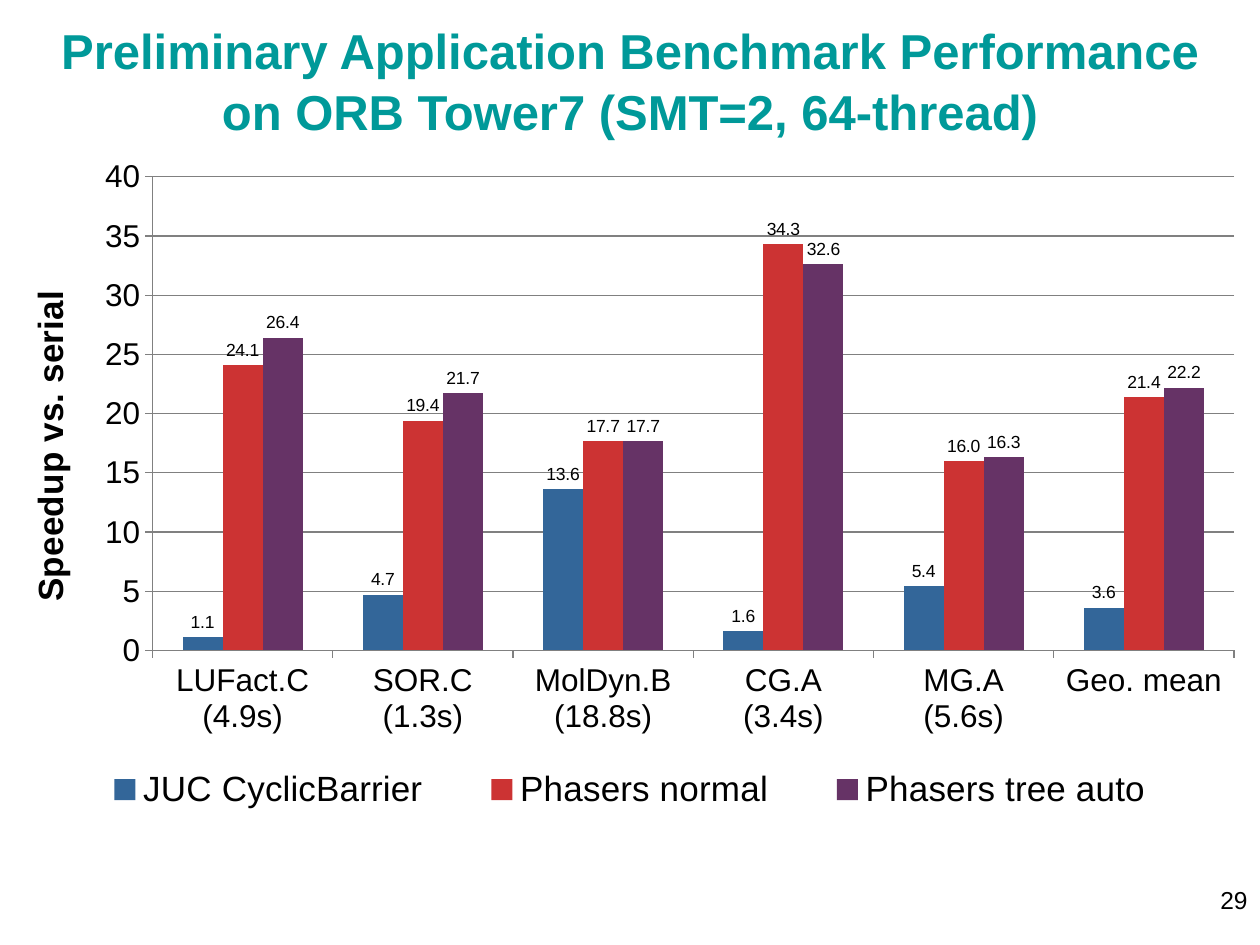
from dataclasses import dataclass
from typing import NamedTuple

from lxml.etree import SubElement
from pptx import Presentation
from pptx.chart.data import CategoryChartData
from pptx.dml.color import RGBColor
from pptx.enum.chart import (
    XL_CHART_TYPE as ChartType,
    XL_LABEL_POSITION as LabelPosition,
    XL_LEGEND_POSITION as LegendPosition,
    XL_TICK_MARK as TickMark,
)
from pptx.enum.text import MSO_ANCHOR as Anchor, MSO_AUTO_SIZE as AutoSize, PP_ALIGN as Align
from pptx.oxml.ns import qn
from pptx.util import Pt

EMU_PER_PX = 914400 / 126


@dataclass(frozen=True)
class Theme:
    font: str = "Arial"
    heading: str = "009999"
    ink: str = "000000"
    line: str = "808080"
    title_size: int = 28
    legend_size: int = 20
    axis_size: int = 18
    number_size: int = 14
    label_size: int = 10


class Box(NamedTuple):
    left: int
    top: int
    width: int
    height: int


class Fractions(NamedTuple):
    """A place inside the chart, as parts of its width and height."""
    x: float
    y: float
    w: float
    h: float


class Series(NamedTuple):
    name: str
    color: str
    speedups: tuple[float, ...]


THEME = Theme()
SLIDE = Box(0, 0, 1260, 945)
TITLE = Box(0, 0, 1260, 158)
CHART = Box(21, 158, 1218, 672)
PAGE_NUMBER = Box(966, 879, 294, 66)
PLOT = Fractions(0.108, 0.028, 0.888, 0.705)
LEGEND = Fractions(0.03, 0.9, 0.94, 0.08)

TITLE_LINES = (
    "Preliminary Application Benchmark Performance",
    "on ORB Tower7 (SMT=2, 64-thread)",
)
BENCHMARKS = (
    "LUFact.C\n(4.9s)", "SOR.C\n(1.3s)", "MolDyn.B\n(18.8s)",
    "CG.A\n(3.4s)", "MG.A\n(5.6s)", "Geo. mean",
)
SERIES = (
    Series("JUC CyclicBarrier", "336699", (1.1, 4.7, 13.6, 1.6, 5.4, 3.6)),
    Series("Phasers normal", "CC3333", (24.1, 19.4, 17.7, 34.3, 16.0, 21.4)),
    Series("Phasers tree auto", "663366", (26.4, 21.7, 17.7, 32.6, 16.3, 22.2)),
)


def px(length: int) -> int:
    return round(length * EMU_PER_PX)


def emu(box: Box) -> tuple[int, ...]:
    return tuple(px(length) for length in box)


def style_font(font, size: int, color: str = THEME.ink, bold: bool = False) -> None:
    font.name = THEME.font
    font.size = Pt(size)
    font.bold = bold
    font.color.rgb = RGBColor.from_string(color)


def style_line(line) -> None:
    line.color.rgb = RGBColor.from_string(THEME.line)
    line.width = Pt(0.75)


def add_title(slide) -> None:
    title = slide.shapes.title
    title.left, title.top, title.width, title.height = emu(TITLE)
    frame = title.text_frame
    frame.word_wrap = True
    frame.auto_size = AutoSize.NONE
    frame.vertical_anchor = Anchor.MIDDLE
    para = frame.paragraphs[0]
    para.alignment = Align.CENTER
    para.line_spacing = 1.05
    for index, line in enumerate(TITLE_LINES):
        if index:
            para.add_line_break()
        span = para.add_run()
        span.text = line
        style_font(span.font, THEME.title_size, THEME.heading, bold=True)


def add_page_number(slide, number: str) -> None:
    frame = slide.shapes.add_textbox(*emu(PAGE_NUMBER)).text_frame
    frame.word_wrap = True
    para = frame.paragraphs[0]
    para.alignment = Align.RIGHT
    span = para.add_run()
    span.text = number
    style_font(span.font, THEME.number_size)


def place_part(part, index: int, place: Fractions, inner: bool = False) -> None:
    """Give a chart part a manual layout as its child at the given index."""
    for old in part.findall(qn("c:layout")):
        part.remove(old)
    layout = SubElement(part, qn("c:layout"))
    part.insert(index, layout)
    manual = SubElement(layout, qn("c:manualLayout"))
    settings = {"layoutTarget": "inner"} if inner else {}
    settings |= {"xMode": "edge", "yMode": "edge"}
    settings |= {key: str(value) for key, value in place._asdict().items()}
    for tag, value in settings.items():
        SubElement(manual, qn(f"c:{tag}")).set("val", value)


def style_axes(chart) -> None:
    for axis in (chart.category_axis, chart.value_axis):
        axis.major_tick_mark = TickMark.OUTSIDE
        axis.minor_tick_mark = TickMark.NONE
        style_font(axis.tick_labels.font, THEME.axis_size)
        style_line(axis.format.line)
    axis = chart.value_axis
    axis.minimum_scale, axis.maximum_scale, axis.major_unit = 0, 40, 5
    axis.tick_labels.number_format = "0"
    axis.tick_labels.number_format_is_linked = False
    axis.has_major_gridlines = True
    style_line(axis.major_gridlines.format.line)
    span = axis.axis_title.text_frame.paragraphs[0].add_run()
    span.text = "Speedup vs. serial"
    style_font(span.font, THEME.legend_size, bold=True)


def style_bars(plot) -> None:
    plot.gap_width = 150
    plot.overlap = 0
    plot.vary_by_categories = False
    for bars, series in zip(plot.series, SERIES):
        bars.format.fill.solid()
        bars.format.fill.fore_color.rgb = RGBColor.from_string(series.color)
        labels = bars.data_labels
        labels.show_value = True
        labels.position = LabelPosition.OUTSIDE_END
        labels.number_format = "0.0"
        labels.number_format_is_linked = False
        style_font(labels.font, THEME.label_size)


def add_speedup_chart(slide) -> None:
    data = CategoryChartData(number_format="0.0")
    data.categories = BENCHMARKS
    for series in SERIES:
        data.add_series(series.name, series.speedups)
    chart = slide.shapes.add_chart(ChartType.COLUMN_CLUSTERED, *emu(CHART), data).chart
    style_font(chart.font, THEME.axis_size)
    chart.has_title = False
    style_axes(chart)
    style_bars(chart.plots[0])
    chart.has_legend = True
    legend = chart.legend
    legend.position = LegendPosition.BOTTOM
    legend.include_in_layout = False
    style_font(legend.font, THEME.legend_size)
    place_part(legend._element, 1, LEGEND)
    place_part(chart._chartSpace.chart.plotArea, 0, PLOT, inner=True)


def main() -> None:
    deck = Presentation()
    deck.slide_width, deck.slide_height = px(SLIDE.width), px(SLIDE.height)
    slide = deck.slides.add_slide(deck.slide_layouts.get_by_name("Title Only"))
    add_title(slide)
    add_page_number(slide, "29")
    add_speedup_chart(slide)
    deck.save("out.pptx")


if __name__ == "__main__":
    main()
